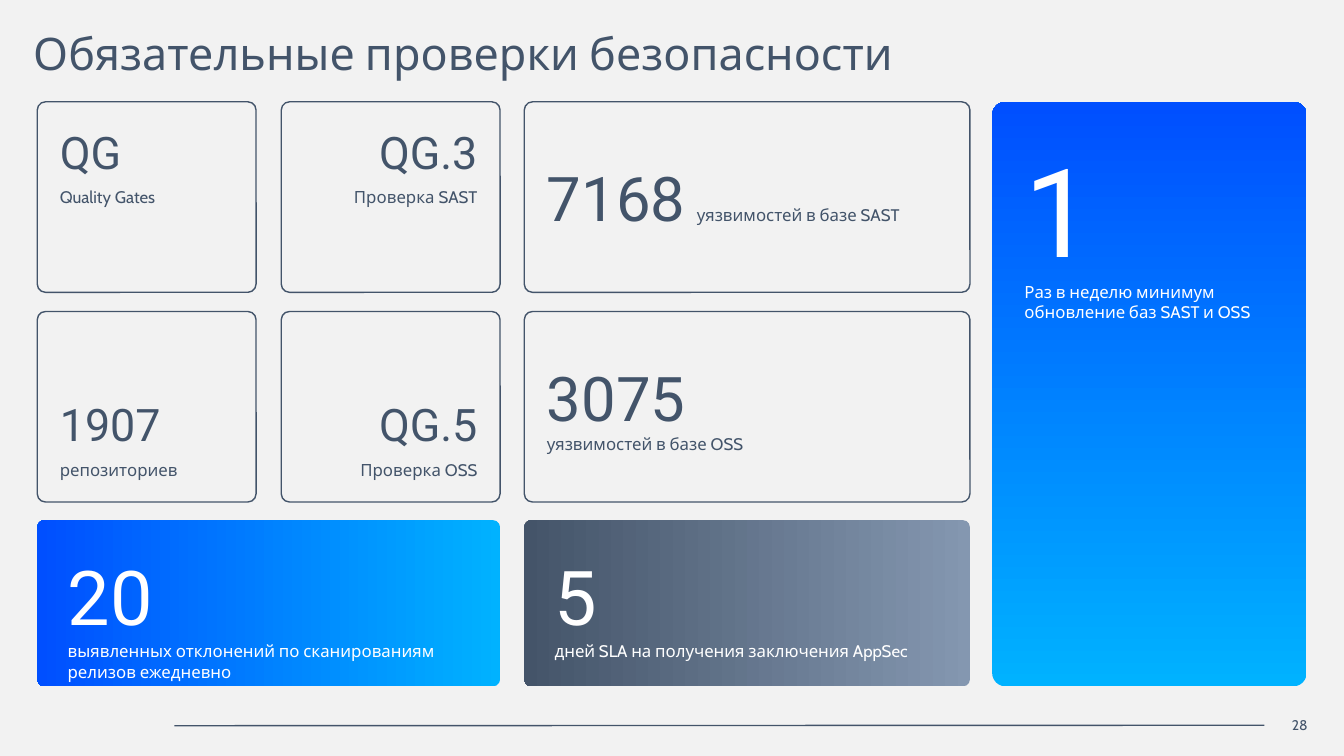
from pptx import Presentation
from pptx.dml.color import RGBColor
from pptx.enum.shapes import MSO_CONNECTOR, MSO_SHAPE
from pptx.enum.text import MSO_ANCHOR, PP_ALIGN
from pptx.oxml.ns import qn
from pptx.util import Inches, Pt
from lxml.etree import SubElement

COLORS = {
    "background": "F2F2F2",
    "ink": "43546A",
    "white": "FFFFFF",
    "sky": "00B2FF",
    "blue": "004FFF",
    "steel": "8497B0",
    "slate": "445469",
}
TEXT_FONT = "Cabin"
NUMBER_FONT = "Roboto"
COLUMNS = [0.37, 2.79, 5.2, 9.84]
ROWS = [1.01, 3.09, 5.16]
SMALL, DOUBLE, WIDE = 2.17, 4.59, 4.42
CARD_HEIGHT, TILE_HEIGHT = 1.89, 1.65


def color(name):
    return RGBColor.from_string(COLORS[name])


def add_span(para, text, size, font=TEXT_FONT, ink="ink"):
    span = para.add_run()
    span.text = text
    span.font.size = Pt(size)
    span.font.name = font
    span.font.color.rgb = color(ink)


def set_frame(shape, insets, anchor=MSO_ANCHOR.TOP):
    frame = shape.text_frame
    frame.word_wrap = True
    frame.vertical_anchor = anchor
    left, top, right, bottom = (Inches(inset) for inset in insets)
    frame.margin_left, frame.margin_top = left, top
    frame.margin_right, frame.margin_bottom = right, bottom
    return frame


def add_label(page, box, text, size, align=PP_ALIGN.LEFT, anchor=MSO_ANCHOR.TOP):
    label = page.shapes.add_textbox(*(Inches(length) for length in box))
    para = set_frame(label, (0, 0, 0, 0), anchor).paragraphs[0]
    para.alignment = align
    add_span(para, text, size)
    return label


def add_panel(page, box):
    panel = page.shapes.add_shape(
        MSO_SHAPE.ROUNDED_RECTANGLE, *(Inches(length) for length in box))
    panel.adjustments[0] = 0.043
    panel.shadow.inherit = False
    return panel


def add_figure(frame, number, caption, size, ink, align, space, layout):
    para = frame.paragraphs[0]
    para.alignment = align
    para.space_after = Pt(space)
    add_span(para, number, size, NUMBER_FONT, ink)
    if layout == "inline":
        add_span(para, " ", 36, TEXT_FONT, ink)
    elif layout == "break":
        para.add_line_break()
    else:
        para = frame.add_paragraph()
        para.alignment = align
        para.space_after = Pt(space)
    add_span(para, caption, 12, TEXT_FONT, ink)


def add_card(page, box, number, caption, size=32, align=PP_ALIGN.LEFT,
             anchor=MSO_ANCHOR.TOP, layout="stacked"):
    card = add_panel(page, box)
    card.fill.background()
    card.line.color.rgb = color("ink")
    card.line.width = Pt(1)
    frame = set_frame(card, (0.2, 0.2, 0.2, 0.2), anchor)
    add_figure(frame, number, caption, size, "ink", align, 6, layout)


def add_tile(page, box, number, caption, stops, angle=180, size=54, layout="stacked"):
    tile = add_panel(page, box)
    tile.line.fill.background()
    tile.fill.gradient()
    tile.fill.gradient_angle = angle
    for stop, name in zip(tile.fill.gradient_stops, stops):
        stop.color.rgb = color(name)
    frame = set_frame(tile, (0.28, 0.28, 0.2, 0.12))
    add_figure(frame, number, caption, size, "white", PP_ALIGN.LEFT, 0, layout)


def add_footer(page, box):
    left, top, width, height = box
    number = add_label(page, (left + width - 0.43, top, 0.43, height), "28", 10,
                       PP_ALIGN.RIGHT, MSO_ANCHOR.MIDDLE)
    rule = page.shapes.add_connector(
        MSO_CONNECTOR.STRAIGHT, Inches(left), Inches(top + 0.1),
        Inches(left + width - 0.43), Inches(top + height / 2))
    rule.end_connect(number, 1)
    rule.line.color.rgb = color("ink")
    rule.line.width = Pt(1)
    SubElement(rule._element.spPr, qn("a:effectLst"))


def add_gate_cards(page):
    gates = [
        (0, 0, "QG", "Quality Gates"),
        (1, 0, "QG.3", "Проверка SAST"),
        (0, 1, "1907", "репозиториев"),
        (1, 1, "QG.5", "Проверка OSS"),
    ]
    aligns = [PP_ALIGN.LEFT, PP_ALIGN.RIGHT]
    anchors = [MSO_ANCHOR.TOP, MSO_ANCHOR.BOTTOM]
    for column, row, number, caption in gates:
        add_card(page, (COLUMNS[column], ROWS[row], SMALL, CARD_HEIGHT), number, caption,
                 align=aligns[column], anchor=anchors[row])


def add_vulnerability_cards(page):
    bases = [
        ("7168", "уязвимостей в базе SAST", "inline"),
        ("3075", "уязвимостей в базе OSS", "break"),
    ]
    for top, (number, caption, layout) in zip(ROWS, bases):
        add_card(page, (COLUMNS[2], top, WIDE, CARD_HEIGHT), number, caption,
                 size=44, anchor=MSO_ANCHOR.MIDDLE, layout=layout)


def add_tiles(page):
    add_tile(page, (COLUMNS[0], ROWS[2], DOUBLE, TILE_HEIGHT), "20",
             "выявленных отклонений по сканированиям релизов ежедневно", ("sky", "blue"))
    add_tile(page, (COLUMNS[2], ROWS[2], WIDE, TILE_HEIGHT), "5",
             "дней SLA на получения заключения AppSec", ("steel", "slate"), layout="break")
    add_tile(page, (COLUMNS[3], ROWS[0], 3.12, ROWS[2] + TILE_HEIGHT - ROWS[0]), "1",
             "Раз в неделю минимум обновление баз SAST и OSS", ("sky", "blue"),
             angle=90, size=88)


def main():
    deck = Presentation()
    deck.slide_width, deck.slide_height = Inches(13.33), Inches(7.5)
    page = deck.slides.add_slide(deck.slide_layouts[6])
    page.background.fill.solid()
    page.background.fill.fore_color.rgb = color("background")
    add_footer(page, (1.73, 7.1, 11.24, 0.19))
    add_label(page, (0.33, 0.26, 10.53, 0.54), "Обязательные проверки безопасности", 32)
    add_gate_cards(page)
    add_vulnerability_cards(page)
    add_tiles(page)
    deck.save("out.pptx")


if __name__ == "__main__":
    main()
